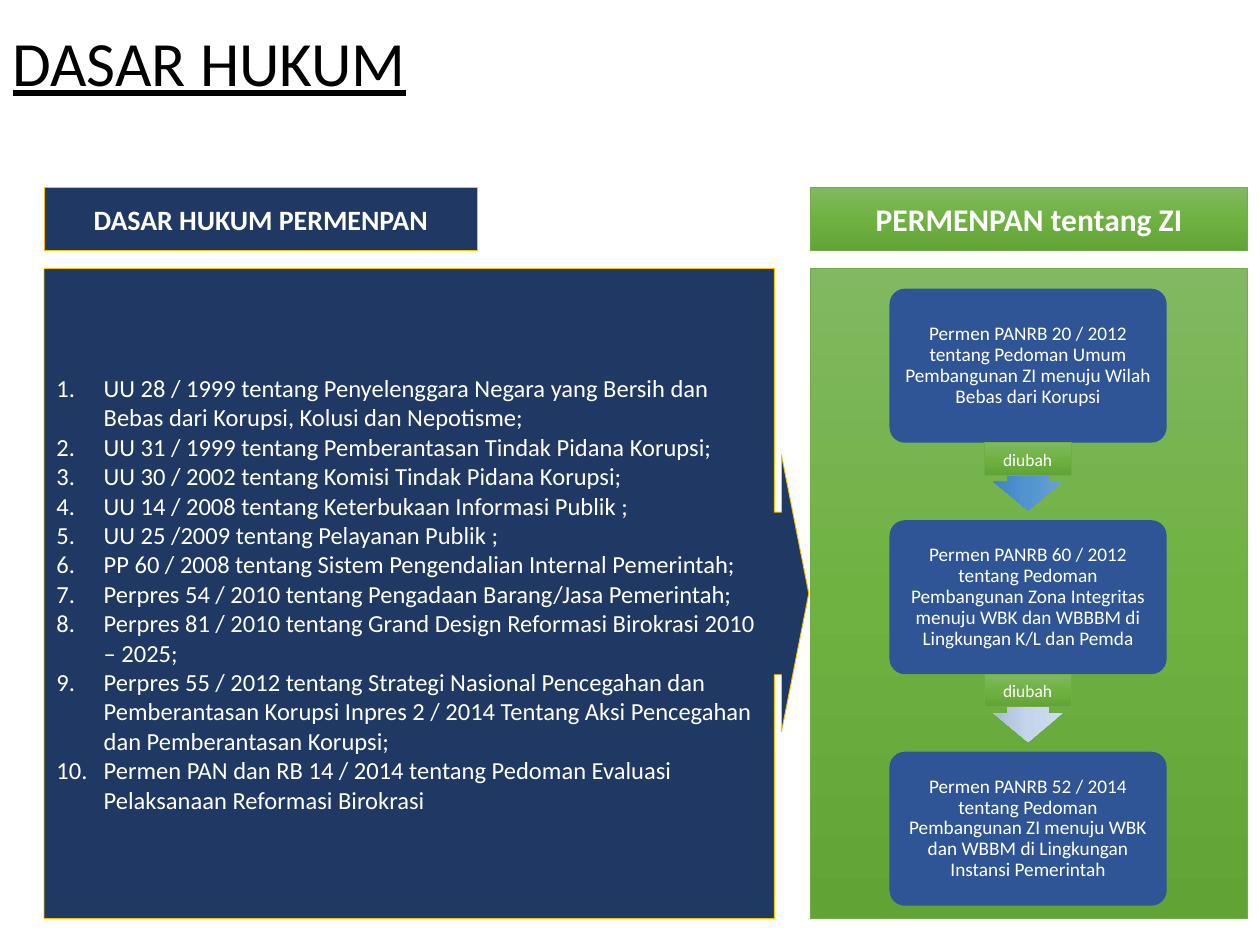
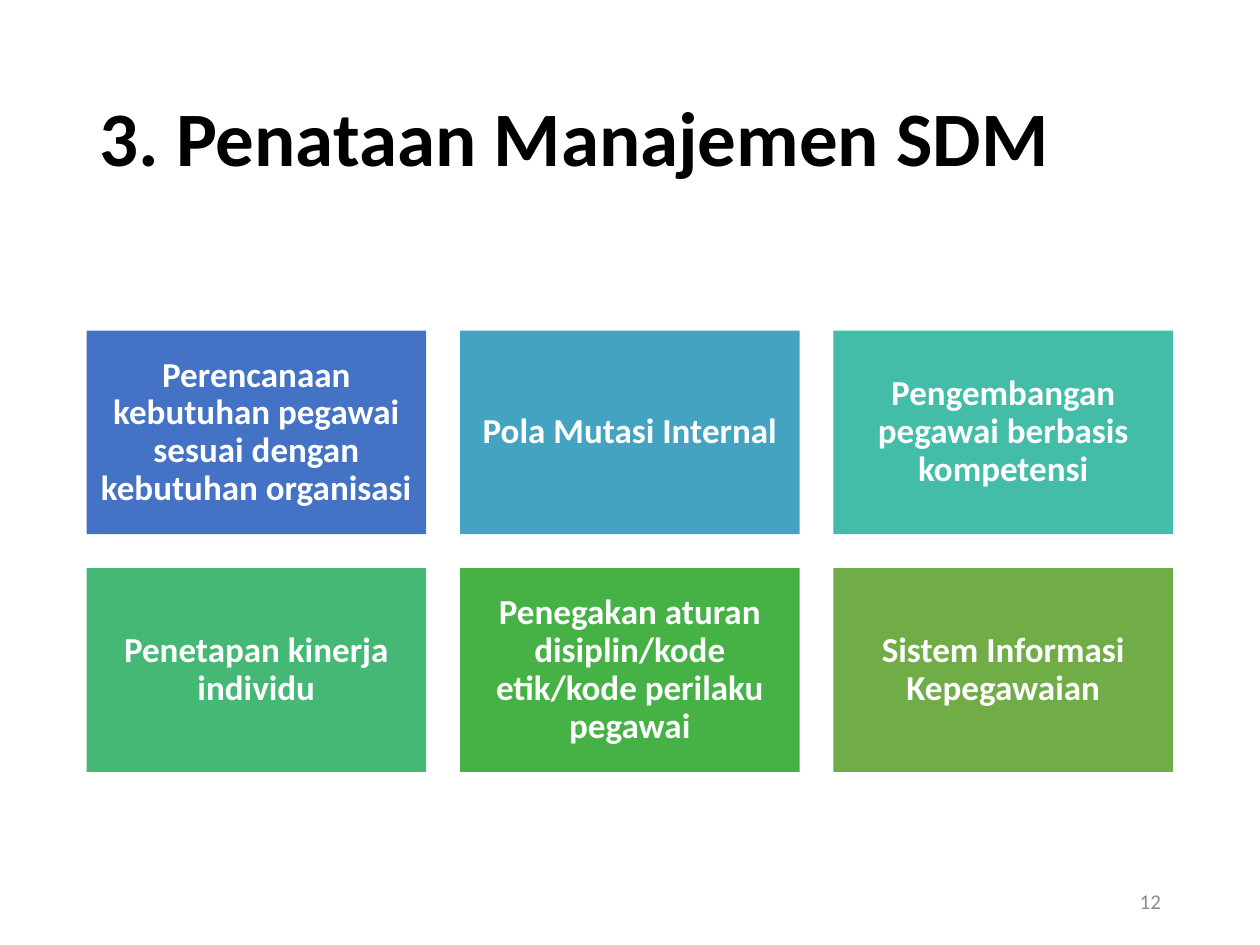
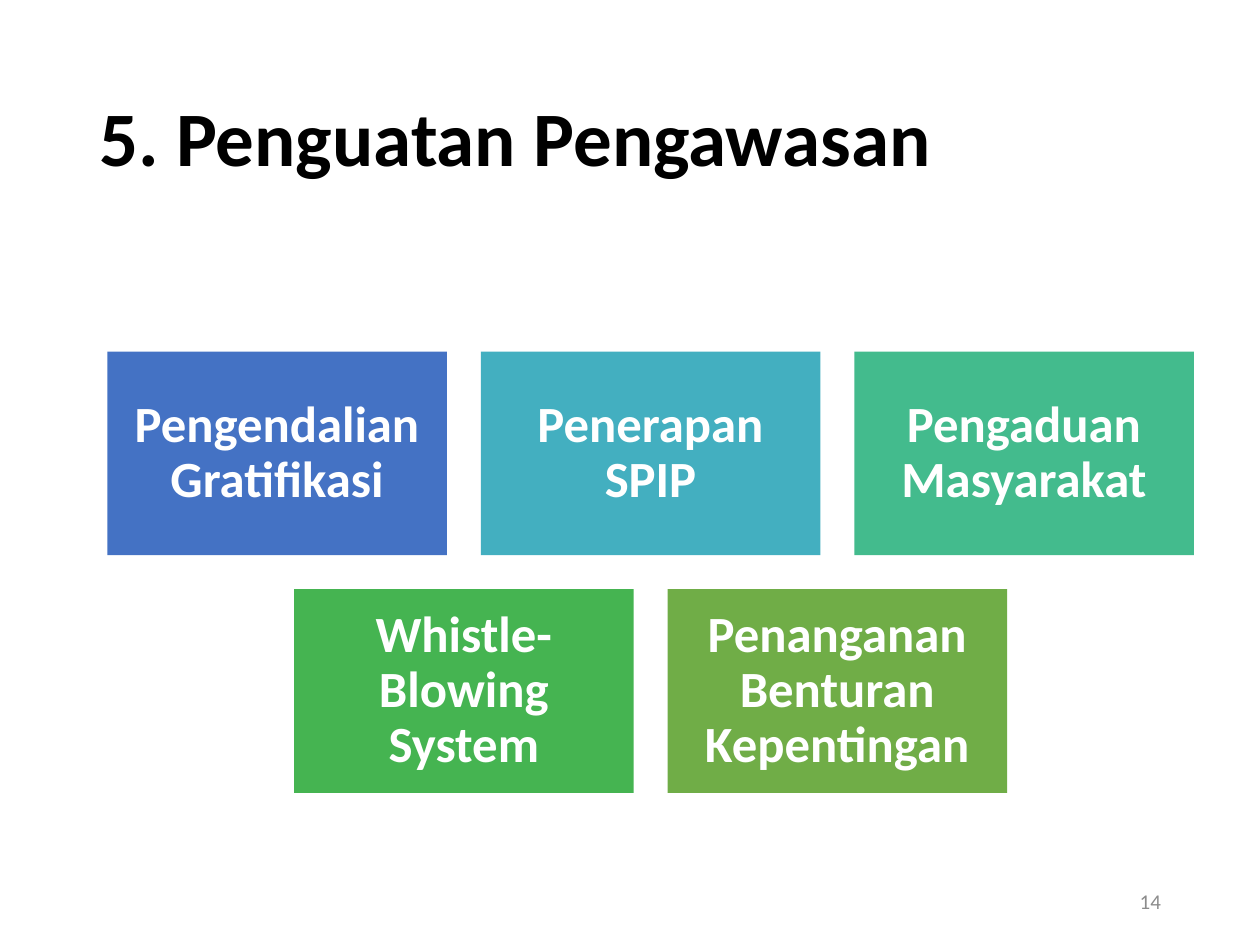
from copy import deepcopy

from lxml import etree
from pptx import Presentation
from pptx.dml.color import RGBColor
from pptx.enum.shapes import MSO_SHAPE
from pptx.enum.text import MSO_ANCHOR, MSO_AUTO_SIZE, PP_ALIGN
from pptx.oxml.ns import qn
from pptx.util import Pt

RECT = MSO_SHAPE.RECTANGLE
ROUNDED = MSO_SHAPE.ROUNDED_RECTANGLE
RIGHT_ARROW = MSO_SHAPE.RIGHT_ARROW
ARROW_CALLOUT = MSO_SHAPE.RIGHT_ARROW_CALLOUT
LEFT, CENTER, RIGHT = PP_ALIGN.LEFT, PP_ALIGN.CENTER, PP_ALIGN.RIGHT
MIDDLE = MSO_ANCHOR.MIDDLE
NO_AUTOFIT = MSO_AUTO_SIZE.NONE

FONT = "Calibri"
BLACK = RGBColor(0x00, 0x00, 0x00)
WHITE = RGBColor(0xFF, 0xFF, 0xFF)
GRAY = RGBColor(0x8C, 0x8C, 0x8C)
NAVY = RGBColor(0x20, 0x38, 0x64)
GOLD = RGBColor(0xFF, 0xC0, 0x00)
ROYAL = RGBColor(0x2F, 0x55, 0x97)
BLUE = RGBColor(0x44, 0x72, 0xC4)
GREEN = RGBColor(0x70, 0xAD, 0x47)
SKY = RGBColor(0x44, 0xA3, 0xC0)
TURQUOISE = RGBColor(0x43, 0xBD, 0xA7)
JADE = RGBColor(0x44, 0xB8, 0x74)
LEAF = RGBColor(0x46, 0xB2, 0x46)
CYAN = RGBColor(0x43, 0xAF, 0xC0)
MINT = RGBColor(0x43, 0xBB, 0x8D)
EMERALD = RGBColor(0x45, 0xB4, 0x51)
GREEN_FADE = (RGBColor(0x81, 0xB8, 0x61), RGBColor(0x6F, 0xB2, 0x42), RGBColor(0x62, 0xA3, 0x36))
BLUE_FADE = (RGBColor(0x6E, 0xA0, 0xD2), RGBColor(0x51, 0x94, 0xD1), RGBColor(0x41, 0x84, 0xC1))
PALE_FADE = (RGBColor(0xCE, 0xDC, 0xEF), RGBColor(0xC3, 0xD5, 0xED), RGBColor(0xAA, 0xBD, 0xD6))

TITLE_BOX = (49.5, 28.8, 621, 104.4)
NUMBER_BOX = (508.5, 500.4, 162, 28.8)
CARD_WIDTH, CARD_HEIGHT, CARD_GAP = 194, 116.4, 19.4
COLUMNS = 3

LAWS = [
    "UU 28 / 1999 tentang Penyelenggara Negara yang Bersih dan Bebas dari Korupsi, Kolusi dan Nepotisme;",
    "UU 31 / 1999 tentang Pemberantasan Tindak Pidana Korupsi;",
    "UU 30 / 2002 tentang Komisi Tindak Pidana Korupsi;",
    "UU 14 / 2008 tentang Keterbukaan Informasi Publik ;",
    "UU 25 /2009 tentang Pelayanan Publik ;",
    "PP 60 / 2008 tentang Sistem Pengendalian Internal Pemerintah;",
    "Perpres 54 / 2010 tentang Pengadaan Barang/Jasa Pemerintah;",
    "Perpres 81 / 2010 tentang Grand Design Reformasi Birokrasi 2010 – 2025;",
    "Perpres 55 / 2012 tentang Strategi Nasional Pencegahan dan Pemberantasan Korupsi "
    "Inpres 2 / 2014 Tentang Aksi Pencegahan dan Pemberantasan Korupsi;",
    "Permen PAN dan RB 14 / 2014 tentang Pedoman Evaluasi Pelaksanaan Reformasi Birokrasi",
]
REGULATIONS = [
    "Permen PANRB 20 / 2012 tentang Pedoman Umum Pembangunan ZI menuju Wilah Bebas dari Korupsi",
    "Permen PANRB 60 / 2012 tentang Pedoman Pembangunan Zona Integritas menuju WBK "
    "dan WBBBM di Lingkungan K/L dan Pemda",
    "Permen PANRB 52 / 2014 tentang Pedoman Pembangunan ZI menuju WBK dan WBBM "
    "di Lingkungan Instansi Pemerintah",
]
STAFFING = [
    ("Perencanaan kebutuhan pegawai sesuai dengan kebutuhan organisasi", BLUE),
    ("Pola Mutasi Internal", SKY),
    ("Pengembangan pegawai berbasis kompetensi", TURQUOISE),
    ("Penetapan kinerja individu", JADE),
    ("Penegakan aturan disiplin/kode etik/kode perilaku pegawai", LEAF),
    ("Sistem Informasi Kepegawaian", GREEN),
]
OVERSIGHT = [
    ("Pengendalian Gratifikasi", BLUE),
    ("Penerapan SPIP", CYAN),
    ("Pengaduan Masyarakat", MINT),
    ("Whistle-Blowing System", EMERALD),
    ("Penanganan Benturan Kepentingan", GREEN),
]


def number_paragraph(paragraph, indent):
    properties = paragraph._p.get_or_add_pPr()
    properties.set("marL", str(Pt(indent)))
    properties.set("indent", str(-Pt(indent)))
    etree.SubElement(properties, qn("a:buAutoNum"), type="arabicPeriod")


def write_text(shape, *lines, size, color=WHITE, bold=False, underline=False,
               align=CENTER, spacing=1.0, inset=None, numbered=False):
    frame = shape.text_frame
    frame.word_wrap = True
    frame.auto_size = NO_AUTOFIT
    frame.vertical_anchor = MIDDLE
    if inset is not None:
        frame.margin_left = frame.margin_right = Pt(inset)
        frame.margin_top = frame.margin_bottom = Pt(inset)
    for index, line in enumerate(lines):
        paragraph = frame.add_paragraph() if index else frame.paragraphs[0]
        paragraph.alignment = align
        paragraph.line_spacing = spacing
        if numbered:
            number_paragraph(paragraph, 27)
        run = paragraph.add_run()
        run.text = line
        run.font.name = FONT
        run.font.size = Pt(size)
        run.font.bold = bold
        run.font.underline = underline
        run.font.color.rgb = color


def fade(shape, colors):
    shape.fill.gradient()
    shape.fill.gradient_angle = 270
    stop_list = shape._element.spPr.find(qn("a:gradFill")).find(qn("a:gsLst"))
    stop_list.append(deepcopy(stop_list[0]))
    for stop, color, position in zip(shape.fill.gradient_stops, colors, (0, 0.5, 1)):
        stop.color.rgb = color
        stop.position = position


def add_block(slide, kind, box, fill, outline=None, adjustments=()):
    block = slide.shapes.add_shape(kind, *map(Pt, box))
    block.shadow.inherit = False
    for index, value in enumerate(adjustments):
        block.adjustments[index] = value
    if isinstance(fill, RGBColor):
        block.fill.solid()
        block.fill.fore_color.rgb = fill
    else:
        fade(block, fill)
    if outline is None:
        block.line.fill.background()
    else:
        block.line.color.rgb = outline
        block.line.width = Pt(0.5)
    return block


def add_titled_slide(deck, title, box=TITLE_BOX, size=44, bold=True, underline=False):
    slide = deck.slides.add_slide(deck.slide_layouts[5])
    heading = slide.shapes.title
    heading.left, heading.top, heading.width, heading.height = map(Pt, box)
    write_text(heading, title, size=size, color=BLACK, bold=bold, underline=underline,
               align=LEFT, spacing=0.9)
    return slide


def add_page_number(slide, number):
    footer = slide.shapes.add_textbox(*map(Pt, NUMBER_BOX))
    write_text(footer, number, size=12, color=GRAY, align=RIGHT)


def add_card_grid(slide, cards, left, top, size, inset):
    for index, (label, color) in enumerate(cards):
        row, column = divmod(index, COLUMNS)
        row_count = min(COLUMNS, len(cards) - row * COLUMNS)
        column += (COLUMNS - row_count) / 2
        box = (left + column * (CARD_WIDTH + CARD_GAP),
               top + row * (CARD_HEIGHT + CARD_GAP), CARD_WIDTH, CARD_HEIGHT)
        card = add_block(slide, RECT, box, color)
        write_text(card, label, size=size, bold=True, spacing=0.9, inset=inset)


def add_regulation_chain(slide, left, top, pitch):
    width, height = 158.4, 88
    center = left + width / 2
    for index, regulation in enumerate(REGULATIONS):
        card = add_block(slide, ROUNDED, (left, top + index * pitch, width, height),
                         ROYAL, adjustments=[0.1])
        write_text(card, regulation, size=11, spacing=0.9, inset=3.6)
    for index, colors in enumerate((BLUE_FADE, PALE_FADE)):
        card_bottom = top + index * pitch + height
        arrow = add_block(slide, RIGHT_ARROW, (center - 16.5, card_bottom + 2.5, 33, 39.6),
                          colors, adjustments=[0.6, 0.5])
        arrow.rotation = 90
        change = add_block(slide, RECT, (center - 25.2, card_bottom, 49.7, 18.7),
                           GREEN_FADE, GREEN)
        write_text(change, "diubah", size=10)


def add_legal_basis(deck):
    slide = add_titled_slide(deck, "DASAR HUKUM", box=(0, 8, 688.3, 59.8), size=36,
                             bold=False, underline=True)
    basis_left, zone_left, zone_width = 25.2, 463, 250
    header_top, header_height, panel_top, panel_height = 107.3, 36, 153.4, 371.5
    basis_header = add_block(slide, RECT, (basis_left, header_top, 247.7, header_height),
                             NAVY, GOLD)
    write_text(basis_header, "DASAR HUKUM PERMENPAN", size=16, bold=True)
    laws = add_block(slide, ARROW_CALLOUT, (basis_left, panel_top, 437, panel_height),
                     NAVY, GOLD, [0.25, 0.213, 0.042, 0.955])
    write_text(laws, *LAWS, size=14, align=LEFT, numbered=True)
    add_block(slide, RECT, (zone_left, panel_top, zone_width, panel_height), GREEN_FADE, GREEN)
    zone_header = add_block(slide, RECT, (zone_left, header_top, zone_width, header_height),
                            GREEN_FADE, GREEN)
    write_text(zone_header, "PERMENPAN tentang ZI", size=18, bold=True)
    add_regulation_chain(slide, 508.3, 165, 132.3)


def add_programme(deck, title, number, cards, **layout):
    slide = add_titled_slide(deck, title)
    add_page_number(slide, number)
    add_card_grid(slide, cards, **layout)


def main():
    deck = Presentation()
    deck.slide_width, deck.slide_height = Pt(720), Pt(540)
    add_legal_basis(deck)
    add_programme(deck, "3. Penataan Manajemen SDM", "12", STAFFING,
                  left=49.5, top=188.9, size=20, inset=6)
    add_programme(deck, "5. Penguatan Pengawasan", "14", OVERSIGHT,
                  left=61.4, top=200.9, size=29, inset=8.7)
    deck.save("out.pptx")


if __name__ == "__main__":
    main()
